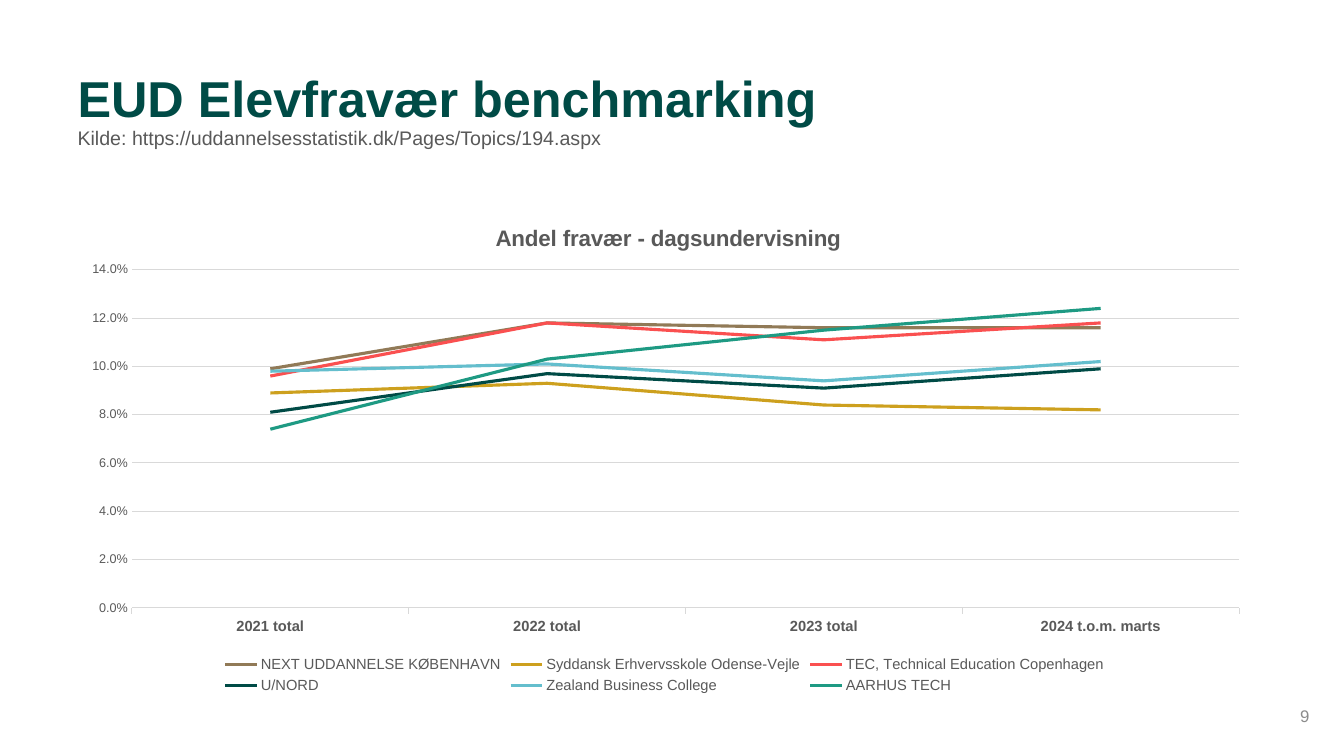
from lxml import etree
from pptx import Presentation, util as u
from pptx.chart.data import CategoryChartData
from pptx.dml.color import RGBColor
from pptx.enum import chart as charts, text
from pptx.oxml.ns import qn

# Content
HEADING = "EUD Elevfravær benchmarking"
SOURCE = "Kilde: https://uddannelsesstatistik.dk/Pages/Topics/194.aspx"
PAGE_NUMBER = "9"
CHART_TITLE = "Andel fravær - dagsundervisning"
PERIODS = ["2021 total", "2022 total", "2023 total", "2024 t.o.m. marts"]

GREEN = RGBColor(0x00, 0x4B, 0x46)
GREY = RGBColor(0x59, 0x59, 0x59)
PALE_GREY = RGBColor(0xD9, 0xD9, 0xD9)
NUMBER_GREY = RGBColor(0x8C, 0x8C, 0x8C)
BROWN = RGBColor(0x91, 0x7A, 0x57)
OCHRE = RGBColor(0xCD, 0xA0, 0x1E)
RED = RGBColor(0xFA, 0x50, 0x50)
BLUE = RGBColor(0x64, 0xBE, 0xCD)
TEAL = RGBColor(0x1E, 0x9A, 0x83)

SCHOOLS = [
    ("NEXT UDDANNELSE KØBENHAVN", BROWN, (0.099, 0.118, 0.116, 0.116)),
    ("Syddansk Erhvervsskole Odense-Vejle", OCHRE, (0.089, 0.093, 0.084, 0.082)),
    ("TEC, Technical Education Copenhagen", RED, (0.096, 0.118, 0.111, 0.118)),
    ("U/NORD", GREEN, (0.081, 0.097, 0.091, 0.099)),
    ("Zealand Business College", BLUE, (0.098, 0.101, 0.094, 0.102)),
    ("AARHUS TECH", TEAL, (0.074, 0.103, 0.115, 0.124)),
]

LEFT, WIDTH = u.Cm(1.7), u.Cm(30.1)


def set_font(font, size, color, bold=False):
    values = {"name": "Arial", "size": u.Pt(size), "bold": bold}
    for key, value in values.items():
        setattr(font, key, value)
    font.color.rgb = color


def set_line(line, color, width):
    line.color.rgb = color
    line.width = u.Pt(width)


def set_layout(parent, index, **places):
    """Place a chart part by fractions of the chart area."""
    for old in parent.findall(qn("c:layout")):
        parent.remove(old)
    layout = etree.Element(qn("c:layout"))
    manual = etree.SubElement(layout, qn("c:manualLayout"))
    if "w" in places:
        etree.SubElement(manual, qn("c:layoutTarget"), val="inner")
    for key in ("xMode", "yMode"):
        etree.SubElement(manual, qn("c:" + key), val="edge")
    for key, value in places.items():
        etree.SubElement(manual, qn("c:" + key), val=str(value))
    parent.insert(index, layout)


deck = Presentation()
deck.slide_width, deck.slide_height = u.Cm(33.87), u.Cm(19.05)
page = deck.slides.add_slide(deck.slide_layouts[5])

# Title with source line
title = page.shapes.title
title.left, title.top, title.width, title.height = LEFT, u.Cm(1.73), WIDTH, u.Cm(2.97)
title.text_frame.vertical_anchor = text.MSO_ANCHOR.TOP
para = title.text_frame.paragraphs[0]
para.alignment = text.PP_ALIGN.LEFT
para.line_spacing = 0.9
span = para.add_run()
span.text = HEADING
set_font(span.font, 36, GREEN, True)
para.add_line_break()
span = para.add_run()
span.text = SOURCE
set_font(span.font, 14, GREY)

# Absence chart
data = CategoryChartData(number_format="0.0%")
data.categories = PERIODS
for name, color, shares in SCHOOLS:
    data.add_series(name, shares)
chart = page.shapes.add_chart(charts.XL_CHART_TYPE.LINE, LEFT, u.Cm(5.03),
                              WIDTH, u.Cm(12.55), data).chart
set_font(chart.font, 10, GREY)
plot = chart.plots[0]
plot.vary_by_categories = False
for series, (name, color, shares) in zip(plot.series, SCHOOLS):
    series.smooth = False
    set_line(series.format.line, color, 2.25)

chart.has_title = True
para = chart.chart_title.text_frame.paragraphs[0]
span = para.add_run()
span.text = CHART_TITLE
set_font(span.font, 16, GREY, True)
chart.chart_title.include_in_layout = False

chart.has_legend = True
chart.legend.position = charts.XL_LEGEND_POSITION.BOTTOM
chart.legend.include_in_layout = False
set_font(chart.legend.font, 10.5, GREY)

# Axes
periods, shares_axis = chart.category_axis, chart.value_axis
set_font(periods.tick_labels.font, 10.5, GREY, True)
periods.major_tick_mark = charts.XL_TICK_MARK.OUTSIDE
set_line(periods.format.line, PALE_GREY, 0.75)
set_font(shares_axis.tick_labels.font, 9, GREY)
shares_axis.tick_labels.number_format = "0.0%"
shares_axis.tick_labels.number_format_is_linked = False
shares_axis.major_tick_mark = charts.XL_TICK_MARK.NONE
shares_axis.format.line.fill.background()
set_line(shares_axis.major_gridlines.format.line, PALE_GREY, 0.75)
scale = {"minimum_scale": 0, "maximum_scale": 0.14, "major_unit": 0.02}
for key, value in scale.items():
    setattr(shares_axis, key, value)

# Chart title and plot positions
chart_xml = chart.plots[0]._element.getparent()
set_layout(chart_xml, 0, x=0.054, y=0.141, w=0.927, h=0.679)
set_layout(chart.chart_title._element, 1, x=0.355, y=0.04)

# Page number
box = page.shapes.add_textbox(u.Cm(30.86), u.Cm(17.78), u.Cm(2.39), u.Cm(0.53))
frame = box.text_frame
frame.word_wrap = True
frame.vertical_anchor = text.MSO_ANCHOR.MIDDLE
frame.margin_top = frame.margin_bottom = 0
para = frame.paragraphs[0]
para.alignment = text.PP_ALIGN.RIGHT
span = para.add_run()
span.text = PAGE_NUMBER
set_font(span.font, 12, NUMBER_GREY)

deck.save("out.pptx")
